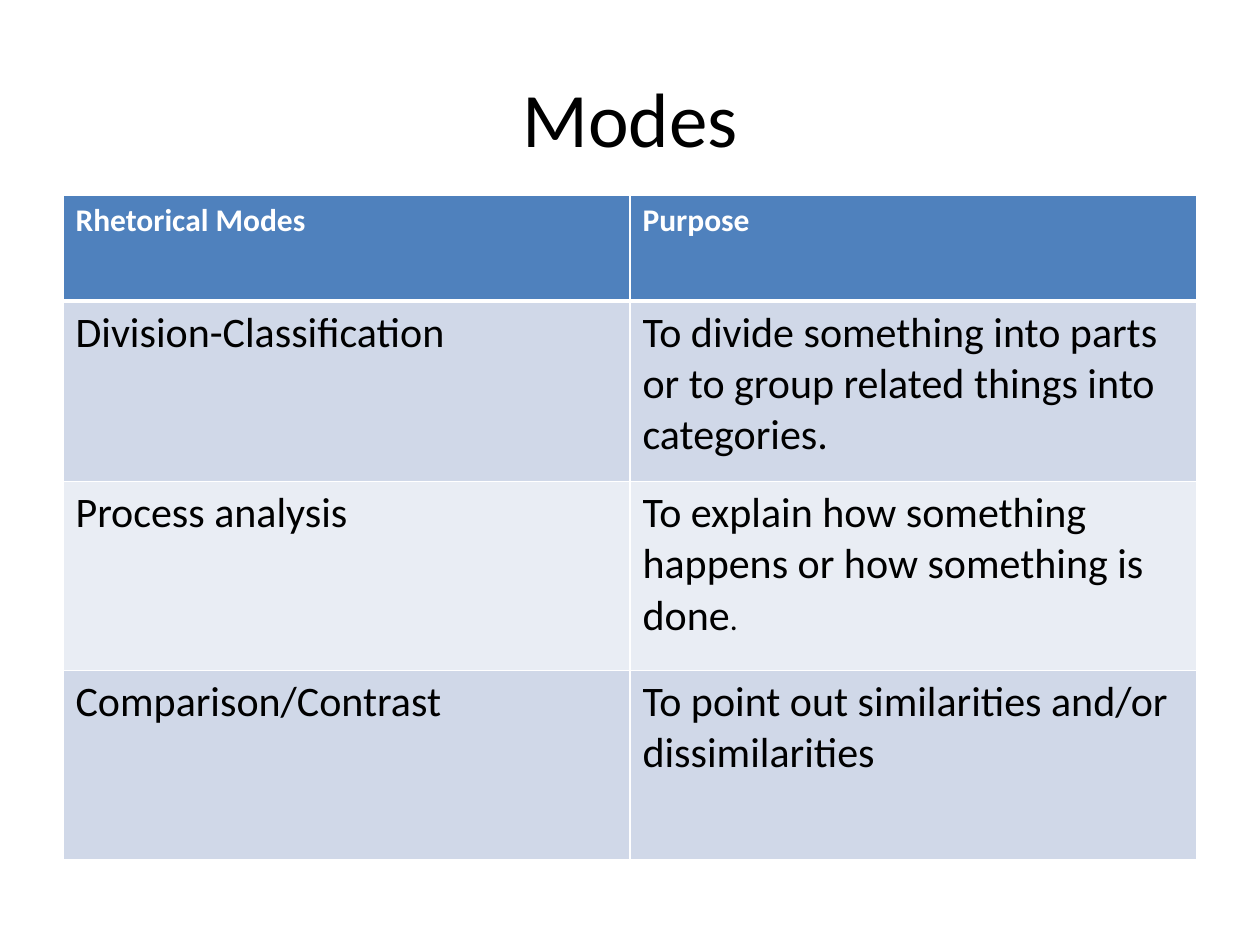
from lxml.etree import SubElement as Sub
from pptx import Presentation
from pptx.dml.color import RGBColor
from pptx.enum.text import MSO_ANCHOR as Anchor, PP_ALIGN as Align
from pptx.oxml.ns import qn
from pptx.util import Pt

WHITE, BLACK, BLUE = "FFFFFF", "000000", "4F81BD"
BANDS = ["D0D8E8", "E9EDF4"]
HEADS = ["Rhetorical Modes", "Purpose"]
# Each cell is a list of (text, size) runs.
MODES = [
    [[("Division-Classification", 24)],
     [("To divide something into parts or to group related things into "
       "categories.", 24)]],
    [[("Process analysis", 24)],
     [("To explain how something happens or how something is done", 24),
      (".", 18)]],
    [[("Comparison/Contrast", 24)],
     [("To point out similarities and/or dissimilarities", 24)]],
]
HEIGHTS = [60.5, 103, 108, 108]


def paint(hue):
    return RGBColor.from_string(hue)


class Deck:
    font = "Calibri"

    def __init__(self, wide, high):
        self.prs = Presentation()
        self.prs.slide_width, self.prs.slide_height = Pt(wide), Pt(high)
        self.slide = self.prs.slides.add_slide(self.prs.slide_layouts[5])

    def add_text(self, para, text, size, hue, bold=False):
        run = para.add_run()
        run.text = text
        run.font.name, run.font.size, run.font.bold = self.font, Pt(size), bold
        run.font.color.rgb = paint(hue)

    def title(self, text, box):
        shape = self.slide.shapes.title
        shape.left, shape.top, shape.width, shape.height = map(Pt, box)
        frame = shape.text_frame
        frame.vertical_anchor = Anchor.MIDDLE
        para = frame.paragraphs[0]
        para.alignment = Align.CENTER
        self.add_text(para, text, 44, BLACK)

    def edge(self, cell, side, width):
        line = Sub(cell._tc.get_or_add_tcPr(), qn(f"a:ln{side}"),
                   w=str(Pt(width)))
        Sub(Sub(line, qn("a:solidFill")), qn("a:srgbClr"), val=WHITE)

    def cell(self, cell, runs, fill, hue, bold, top, base):
        # Borders come before the fill in the cell properties.
        for side, width in zip("LRTB", (1, 1, top, base)):
            self.edge(cell, side, width)
        cell.fill.solid()
        cell.fill.fore_color.rgb = paint(fill)
        for text, size in runs:
            self.add_text(cell.text_frame.paragraphs[0], text, size, hue, bold)

    def table(self, heads, body, left, top, width, heights):
        """Draw a header row over banded rows, in equal columns."""
        rows = [[[(head, 18)] for head in heads]] + body
        grid = self.slide.shapes.add_table(
            len(rows), len(heads), Pt(left), Pt(top), Pt(width),
            Pt(sum(heights))).table
        for row, high in zip(grid.rows, heights):
            row.height = Pt(high)
        for r, row in enumerate(rows):
            head = r == 0
            fill = BLUE if head else BANDS[(r - 1) % 2]
            hue = WHITE if head else BLACK
            for c, runs in enumerate(row):
                self.cell(grid.cell(r, c), runs, fill, hue, head,
                          3 if r == 1 else 1, 3 if head else 1)


def main():
    deck = Deck(720, 540)
    deck.title("Modes", (36, 21.6, 648, 90))
    deck.table(HEADS, MODES, 36, 111.6, 648, HEIGHTS)
    deck.prs.save("out.pptx")


if __name__ == "__main__":
    main()
